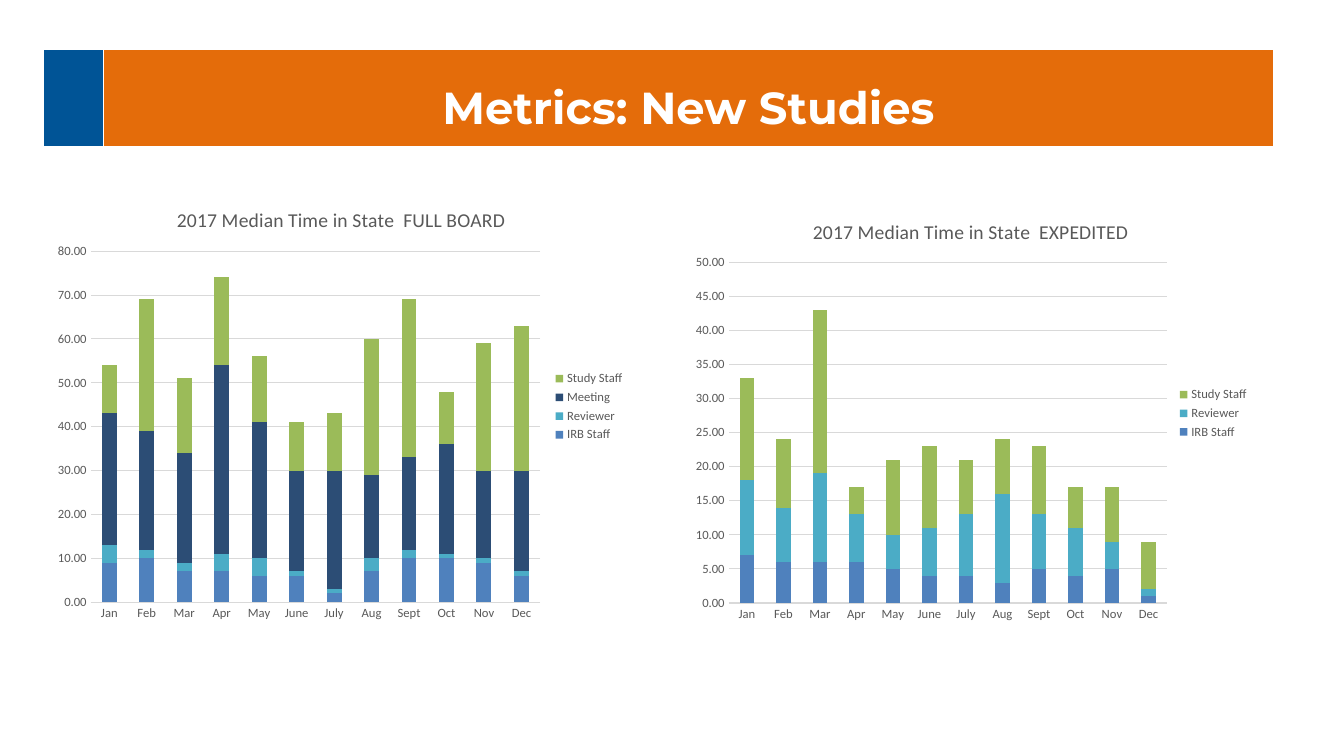
"""Build a slide with a title band and two stacked charts of median time in state."""
from dataclasses import dataclass

from lxml.etree import SubElement
from pptx import Presentation
from pptx.chart.data import CategoryChartData
from pptx.dml.color import RGBColor
from pptx.enum.chart import XL_CHART_TYPE as ChartType
from pptx.enum.chart import XL_LEGEND_POSITION as LegendPosition
from pptx.enum.chart import XL_TICK_MARK as TickMark
from pptx.enum.text import MSO_ANCHOR as Anchor
from pptx.enum.text import PP_ALIGN as Align
from pptx.oxml import parse_xml
from pptx.oxml.ns import nsdecls, qn
from pptx.util import Cm, Pt

MONTHS = ("Jan", "Feb", "Mar", "Apr", "May", "June",
          "July", "Aug", "Sept", "Oct", "Nov", "Dec")
SERIES_COLOURS = {"IRB Staff": "4F81BD", "Reviewer": "4BACC6",
                  "Meeting": "2C4D75", "Study Staff": "9BBB59"}
GREY_TEXT, GREY_LINE, WHITE = "595959", "D9D9D9", "FFFFFF"
LABEL_FONT = {"name": "Calibri", "size": Pt(9), "bold": False}
CHART_TITLE_FONT = {"name": "Calibri", "size": Pt(14), "bold": False}
BAND_FONT = {"name": "Montserrat", "size": Pt(32), "bold": True}
BORDER_POINTS = {"lnL": 1, "lnR": 1, "lnT": 1, "lnB": 3}
PLOT_BOX = {"x": 0.08, "y": 0.15, "w": 0.76, "h": 0.79}
TITLE_SPOT = {"x": 0.22, "y": 0.04}


@dataclass(frozen=True)
class BandCell:
    width: float
    fill: str
    text: str = ""


@dataclass(frozen=True)
class StateChart:
    title: str
    left: float
    top: float
    width: float
    height: float
    maximum: int
    step: int
    days: dict[str, tuple[int, ...]]


BAND = (BandCell(1.52, "005496"), BandCell(29.49, "E46C0A", "Metrics: New Studies"))
CHARTS = (
    StateChart("2017 Median Time in State  FULL BOARD", 1.09, 4.65, 14.91, 11.2, 80, 10, {
        "IRB Staff": (9, 10, 7, 7, 6, 6, 2, 7, 10, 10, 9, 6),
        "Reviewer": (4, 2, 2, 4, 4, 1, 1, 3, 2, 1, 1, 1),
        "Meeting": (30, 27, 25, 43, 31, 23, 27, 19, 21, 25, 20, 23),
        "Study Staff": (11, 30, 17, 20, 15, 11, 13, 31, 36, 12, 29, 33),
    }),
    StateChart("2017 Median Time in State  EXPEDITED", 17.2, 4.98, 14.53, 10.87, 50, 5, {
        "IRB Staff": (7, 6, 6, 6, 5, 4, 4, 3, 5, 4, 5, 1),
        "Reviewer": (11, 8, 13, 7, 5, 7, 9, 13, 8, 7, 4, 1),
        "Study Staff": (15, 10, 24, 4, 11, 12, 8, 8, 10, 6, 8, 7),
    }),
)


def apply(target, values: dict) -> None:
    for name, value in values.items():
        setattr(target, name, value)


def paint(colour_format, colour: str) -> None:
    colour_format.rgb = RGBColor.from_string(colour)


def fill_solid(fill, colour: str) -> None:
    fill.solid()
    paint(fill.fore_color, colour)


def style_font(font, values: dict, colour: str) -> None:
    apply(font, values)
    paint(font.color, colour)


def style_line(line, colour: str) -> None:
    paint(line.color, colour)
    line.width = Pt(0.75)


def border_cell(cell) -> None:
    properties = cell._tc.get_or_add_tcPr()
    for index, (side, points) in enumerate(BORDER_POINTS.items()):
        properties.insert(index, parse_xml(
            f'<a:{side} {nsdecls("a")} w="{Pt(points)}"><a:solidFill>'
            f'<a:srgbClr val="{WHITE}"/></a:solidFill></a:{side}>'))


def add_band(page) -> None:
    total = sum(part.width for part in BAND)
    table = page.shapes.add_table(
        1, len(BAND), Cm(1.09), Cm(1.24), Cm(total), Cm(2.49)).table
    apply(table, {"first_row": False, "horz_banding": False})
    for index, part in enumerate(BAND):
        table.columns[index].width = Cm(part.width)
        cell = table.cell(0, index)
        cell.vertical_anchor = Anchor.TOP
        fill_solid(cell.fill, part.fill)
        border_cell(cell)
        if part.text:
            para = cell.text_frame.paragraphs[0]
            apply(para, {"alignment": Align.CENTER, "line_spacing": 1.5})
            span = para.add_run()
            span.text = part.text
            style_font(span.font, BAND_FONT, WHITE)


def place_part(parent, index: int, position: dict[str, float], inner: bool) -> None:
    for previous in parent.findall(qn("c:layout")):
        parent.remove(previous)
    layout = parse_xml(f'<c:layout {nsdecls("c")}><c:manualLayout/></c:layout>')
    manual = layout[0]
    if inner:
        SubElement(manual, qn("c:layoutTarget"), val="inner")
    for axis in ("x", "y"):
        SubElement(manual, qn(f"c:{axis}Mode"), val="edge")
    for name, share in position.items():
        SubElement(manual, qn(f"c:{name}"), val=str(share))
    parent.insert(index, layout)


def style_axes(chart, state: StateChart) -> None:
    for axis in (chart.category_axis, chart.value_axis):
        apply(axis, {"major_tick_mark": TickMark.NONE, "minor_tick_mark": TickMark.NONE})
        style_font(axis.tick_labels.font, LABEL_FONT, GREY_TEXT)
    style_line(chart.category_axis.format.line, GREY_LINE)
    values = chart.value_axis
    apply(values, {"minimum_scale": 0, "maximum_scale": state.maximum,
                   "major_unit": state.step, "has_major_gridlines": True})
    apply(values.tick_labels, {"number_format": "0.00", "number_format_is_linked": False})
    values.format.line.fill.background()
    style_line(values.major_gridlines.format.line, GREY_LINE)


def add_state_chart(page, state: StateChart) -> None:
    data = CategoryChartData()
    data.categories = MONTHS
    for name, days in state.days.items():
        data.add_series(name, days)
    box = [Cm(length) for length in (state.left, state.top, state.width, state.height)]
    chart = page.shapes.add_chart(ChartType.COLUMN_STACKED, *box, data).chart
    style_font(chart.font, {"name": "Calibri", "size": Pt(10)}, "000000")

    chart.has_title = True
    para = chart.chart_title.text_frame.paragraphs[0]
    span = para.add_run()
    span.text = state.title
    style_font(span.font, CHART_TITLE_FONT, GREY_TEXT)
    place_part(chart.chart_title.element, 1, TITLE_SPOT, False)
    place_part(chart.element.find(f".//{qn('c:plotArea')}"), 0, PLOT_BOX, True)

    chart.has_legend = True
    apply(chart.legend, {"position": LegendPosition.RIGHT, "include_in_layout": False})
    style_font(chart.legend.font, LABEL_FONT, GREY_TEXT)
    style_axes(chart, state)

    plot = chart.plots[0]
    apply(plot, {"gap_width": 150, "overlap": 100, "vary_by_categories": False})
    for series in plot.series:
        fill_solid(series.format.fill, SERIES_COLOURS[series.name])


def main() -> None:
    deck = Presentation()
    apply(deck, {"slide_width": Cm(33.87), "slide_height": Cm(19.05)})
    page = deck.slides.add_slide(deck.slide_layouts.get_by_name("Blank"))
    add_band(page)
    for state in CHARTS:
        add_state_chart(page, state)
    deck.save("out.pptx")


if __name__ == "__main__":
    main()
